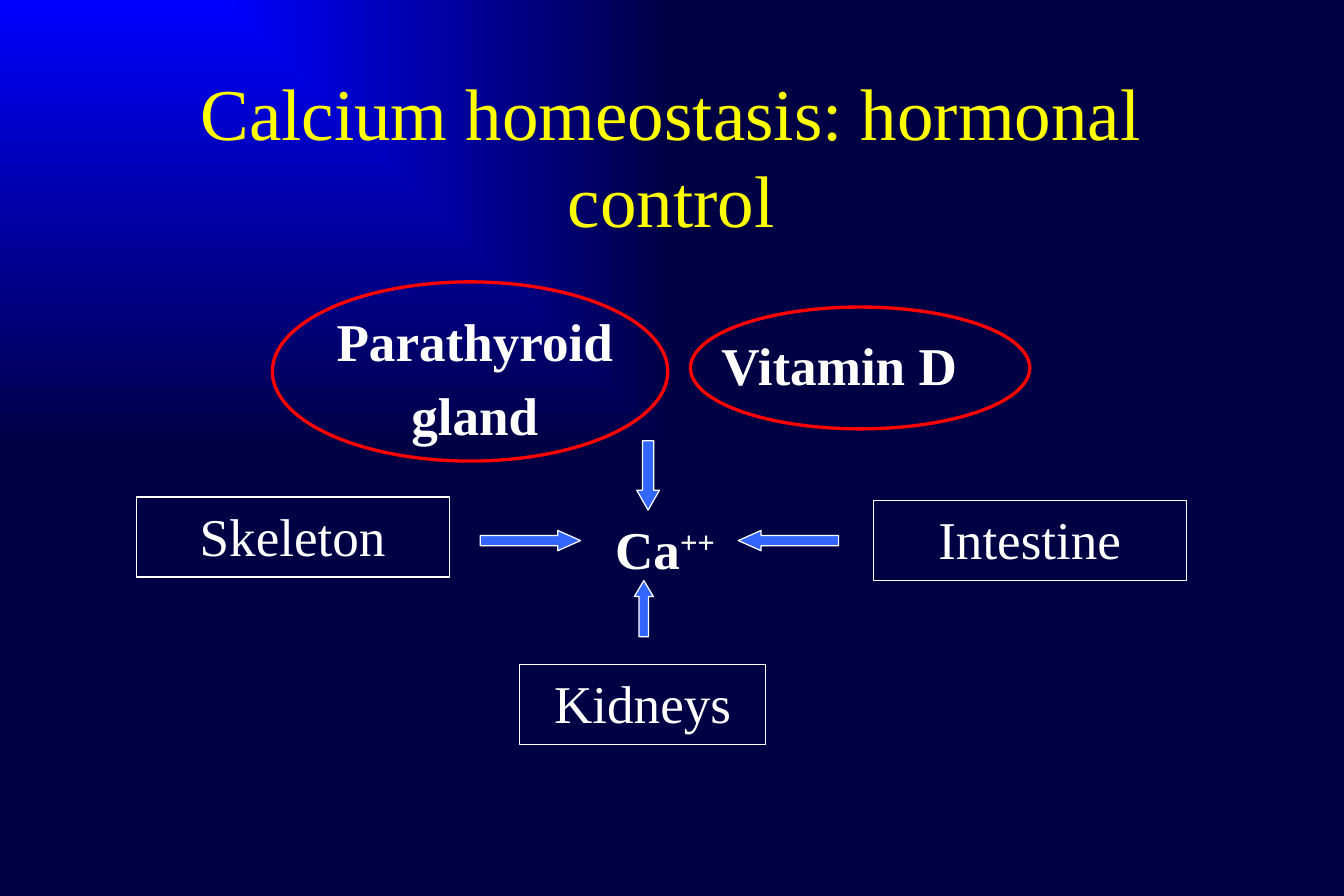
import pptx
import pptx.util
import pptx.dml.color
import pptx.enum.shapes
import pptx.enum.text
import pptx.oxml
from pptx.util import Inches

HUES = {"glow": "0000FF", "night": "000044", "title": "FFFF00",
        "white": "FFFFFF", "arrow": "3366FF", "ring": "FF0000"}
FACE = "Times New Roman"
NS = 'xmlns:a="http://schemas.openxmlformats.org/drawingml/2006/main"'
KIND = pptx.enum.shapes.MSO_SHAPE
ALIGN = pptx.enum.text.PP_ALIGN
ANCHOR = pptx.enum.text.MSO_ANCHOR
FRAME = {"word_wrap": True, "auto_size": pptx.enum.text.MSO_AUTO_SIZE.NONE}


def tint(name):
    return pptx.dml.color.RGBColor.from_string(HUES[name])


def style(item, form):
    for key, value in form.items():
        setattr(item, key, value)


def place(shape, box):
    sides = ("left", "top", "width", "height")
    style(shape, dict(zip(sides, map(Inches, box))))


def edge(shape, hue, width):
    shape.line.color.rgb = tint(hue)
    shape.line.width = pptx.util.Pt(width)


def write(shape, lines, size=32, hue="white", bold=False,
          align=ALIGN.CENTER, anchor=ANCHOR.TOP, gap=6.4):
    """Each line is a list of runs; every second run is raised."""
    frame = shape.text_frame
    style(frame, {**FRAME, "vertical_anchor": anchor})
    for row, runs in enumerate(lines):
        para = frame.add_paragraph() if row else frame.paragraphs[0]
        style(para, {"alignment": align, "space_before": pptx.util.Pt(gap)})
        props = para._p.get_or_add_pPr()
        props.set("marL", "0")
        props.set("indent", "0")
        props.append(pptx.oxml.parse_xml(f"<a:buNone {NS}/>"))
        for spot, text in enumerate(runs):
            run = para.add_run()
            run.text = text
            style(run.font, {"name": FACE, "size": pptx.util.Pt(size), "bold": bold})
            run.font.color.rgb = tint(hue)
            if spot % 2:
                run._r.get_or_add_rPr().set("baseline", "30000")


def paint(slide):
    fill = slide.background.fill
    fill.gradient()
    for stop, name in zip(fill.gradient_stops, ("glow", "night")):
        stop.color.rgb = tint(name)
    line = slide._element.find(".//{*}gradFill/{*}lin")
    line.getparent().replace(line, pptx.oxml.parse_xml(
        f'<a:path {NS} path="rect"><a:fillToRect r="100000" b="100000"/></a:path>'))


def label(slide, box, lines, **form):
    shape = slide.shapes.add_textbox(*map(Inches, box))
    write(shape, lines, bold=True, **form)


def organ(shape, box, name):
    place(shape, box)
    edge(shape, "white", 0.75)
    write(shape, [[name]])


def draw(slide, kind, box, hue, width):
    shape = slide.shapes.add_shape(kind, *map(Inches, box))
    shape.shadow.inherit = False
    shape.fill.background()
    edge(shape, hue, width)
    return shape


def arrow(slide, kind, box, head):
    shape = draw(slide, kind, box, "white", 0.75)
    shape.fill.solid()
    shape.fill.fore_color.rgb = tint("arrow")
    shape.adjustments[0] = 0.5
    shape.adjustments[1] = head


def main():
    deck = pptx.Presentation()
    style(deck, {"slide_width": Inches(11.25), "slide_height": Inches(7.5)})
    slide = deck.slides.add_slide(deck.slide_layouts[1])
    paint(slide)

    # Title
    title, body = slide.placeholders
    place(title, (0.84, 0.67, 9.56, 1.25))
    write(title, [["Calcium homeostasis: hormonal control"]], size=44,
          hue="title", anchor=ANCHOR.MIDDLE, gap=0)

    # Organs
    organ(body, (1.14, 4.16, 2.62, 0.67), "Skeleton")
    for name, box in (("Intestine", (7.31, 4.19, 2.62, 0.67)),
                      ("Kidneys", (4.35, 5.56, 2.06, 0.67))):
        organ(slide.shapes.add_textbox(*map(Inches, box)), box, name)

    # Hormones and calcium
    label(slide, (1.77, 2.53, 4.41, 0.67), [["Parathyroid"], ["gland"]])
    label(slide, (5.05, 4.27, 1.31, 0.67), [["Ca", "++"]], align=ALIGN.LEFT)
    label(slide, (5.94, 2.73, 2.62, 0.67), [["Vitamin D"]], align=ALIGN.LEFT)

    # Arrows towards calcium
    for kind, box, head in (
            (KIND.RIGHT_ARROW, (4.02, 4.44, 0.84, 0.17), 1.125),
            (KIND.LEFT_ARROW, (6.18, 4.44, 0.84, 0.17), 1.125),
            (KIND.UP_ARROW, (5.31, 4.86, 0.16, 0.47), 0.84),
            (KIND.DOWN_ARROW, (5.33, 3.69, 0.19, 0.58), 0.875)):
        arrow(slide, kind, box, head)

    # Rings around the hormones
    for box in ((5.78, 2.57, 2.84, 1.02), (2.28, 2.36, 3.31, 1.5)):
        draw(slide, KIND.OVAL, box, "ring", 2)

    deck.save("out.pptx")


if __name__ == "__main__":
    main()
